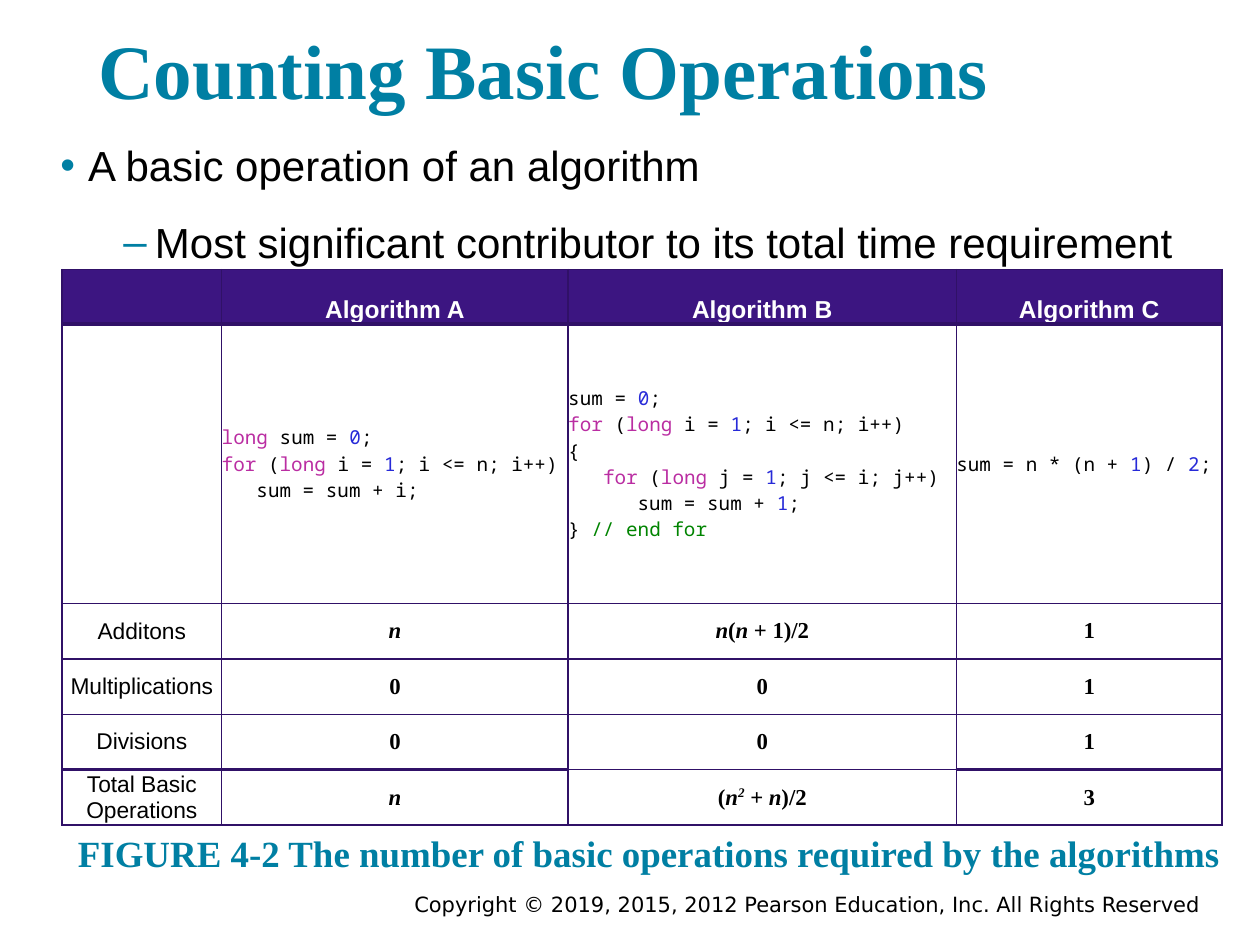
from itertools import groupby, product

from lxml import etree
from pptx import Presentation
from pptx.dml.color import RGBColor
from pptx.enum.text import MSO_ANCHOR, MSO_AUTO_SIZE, PP_ALIGN
from pptx.oxml.ns import qn
from pptx.util import Inches, Pt

LEFT, CENTER, RIGHT = PP_ALIGN.LEFT, PP_ALIGN.CENTER, PP_ALIGN.RIGHT
TOP, MIDDLE, BOTTOM = MSO_ANCHOR.TOP, MSO_ANCHOR.MIDDLE, MSO_ANCHOR.BOTTOM

COLORS = {
    "teal": "007FA3", "black": "000000", "white": "FFFFFF",
    "header": "3C1581", "border": "301167",
    "keyword": "BA2DA2", "number": "272AD8", "comment": "008400",
}

TITLE = "Counting Basic Operations"
BULLETS = [
    # text, bullet, left margin, hanging indent, space before
    ("A basic operation of an algorithm", "•", 0.33, 0.22, 0),
    ("Most significant contributor to its total time requirement", "–", 0.86, 0.25, 15),
]
CAPTION = "FIGURE 4-2 The number of basic operations required by the algorithms"
COPYRIGHT = "Copyright © 2019, 2015, 2012 Pearson Education, Inc. All Rights Reserved"

HEADINGS = ["", "Algorithm A", "Algorithm B", "Algorithm C"]
CODE = [
    "",
    """long sum = 0;
for (long i = 1; i <= n; i++)
   sum = sum + i;""",
    """sum = 0;
for (long i = 1; i <= n; i++)
{
   for (long j = 1; j <= i; j++)
      sum = sum + 1;
} // end for""",
    "sum = n * (n + 1) / 2;",
]
COUNTS = [
    ("Additons", "n", "n(n + 1)/2", "1"),
    ("Multiplications", "0", "0", "1"),
    ("Divisions", "0", "0", "1"),
    ("Total Basic Operations", "n", "(n² + n)/2", "3"),
]
COLUMN_WIDTHS = [1.27, 2.75, 3.08, 2.11]
ROW_HEIGHTS = [0.43, 2.22] + [0.44] * len(COUNTS)
KEYWORDS = {"long", "for"}
# (row above the rule, column): width of the rule in points, 1 elsewhere
HEAVY_RULES = {**{(0, column): 3 for column in range(4)},
               **{(4, column): 2 for column in (0, 1, 3)}}

TITLE_FONT = dict(name="Times New Roman", size=Pt(44), bold=True, color="teal")
BODY_FONT = dict(name="Arial", size=Pt(24), color="black")
CAPTION_FONT = dict(TITLE_FONT, size=Pt(21.1))
COPYRIGHT_FONT = dict(name="DejaVu Sans", size=Pt(12), color="black")
HEADING_FONT = dict(name="Arial", size=Pt(14), bold=True, color="white")
CODE_FONT = dict(name="Noto Sans Mono", size=Pt(11), bold=False, color="black")
LABEL_FONT = dict(name="Arial", size=Pt(13), bold=False, color="black")
MATH_FONT = dict(name="Times New Roman", size=Pt(13), bold=True, color="black")


def rgb(name):
    return RGBColor.from_string(COLORS[name])


def add_span(para, text, formats):
    span = para.add_run()
    span.text = text
    for name, value in formats.items():
        if name == "color":
            span.font.color.rgb = rgb(value)
        else:
            setattr(span.font, name, value)
    return span


def set_frame(box, anchor, inset):
    frame = box.text_frame
    frame.word_wrap = True
    frame.auto_size = MSO_AUTO_SIZE.NONE
    frame.vertical_anchor = anchor
    for side in ("left", "top", "right", "bottom"):
        setattr(frame, f"margin_{side}", Inches(inset))
    return frame


def place(box, *bounds):
    box.left, box.top, box.width, box.height = map(Inches, bounds)


def add_line_of_text(box, text, formats, align, anchor, inset):
    para = set_frame(box, anchor, inset).paragraphs[0]
    para.alignment = align
    add_span(para, text, formats)


def add_bullet(para, symbol, margin, hanging):
    properties = para._p.get_or_add_pPr()
    properties.set("marL", str(Inches(margin)))
    properties.set("indent", str(-Inches(hanging)))
    color = etree.SubElement(properties, qn("a:buClr"))
    etree.SubElement(color, qn("a:srgbClr"), val=COLORS["teal"])
    etree.SubElement(properties, qn("a:buFont"), typeface="Arial")
    etree.SubElement(properties, qn("a:buChar"), char=symbol)


def code_color(word):
    if word in KEYWORDS:
        return "keyword"
    return "number" if word.isdigit() else "black"


def add_code_line(para, line):
    """Write one line of code with its keywords, numbers and comment coloured."""
    code, mark, comment = line.partition("//")
    words = ("".join(letters) for _, letters in groupby(code, str.isalnum))
    for color, group in groupby(words, code_color):
        add_span(para, "".join(group), dict(CODE_FONT, color=color))
    if mark:
        add_span(para, mark + comment, dict(CODE_FONT, color="comment"))


def add_formula(para, formula):
    """Write a formula with italic variables and a raised square."""
    def kind(letter):
        return "power" if letter == "²" else "variable" if letter == "n" else "plain"

    for style, group in groupby(formula, kind):
        text = "".join(group).replace("²", "2")
        span = add_span(para, text, dict(MATH_FONT, italic=style != "plain"))
        if style == "power":
            span._r.get_or_add_rPr().set("baseline", "32000")


def set_borders(cell, row, column):
    widths = {
        "L": 1, "R": 1,
        "T": HEAVY_RULES.get((row - 1, column), 1),
        "B": HEAVY_RULES.get((row, column), 1),
    }
    properties = cell._tc.get_or_add_tcPr()
    for position, (side, width) in enumerate(widths.items()):
        line = etree.Element(qn(f"a:ln{side}"), w=str(Pt(width)))
        fill = etree.SubElement(line, qn("a:solidFill"))
        etree.SubElement(fill, qn("a:srgbClr"), val=COLORS["border"])
        properties.insert(position, line)


def fill_cell(cell, row, column, text):
    cell.fill.solid()
    cell.fill.fore_color.rgb = rgb("white" if row else "header")
    cell.vertical_anchor = MIDDLE if row else BOTTOM
    for side in ("left", "top", "right", "bottom"):
        setattr(cell, f"margin_{side}", 0)
    set_borders(cell, row, column)

    frame = cell.text_frame
    for number, line in enumerate(text.split("\n")):
        para = frame.add_paragraph() if number else frame.paragraphs[0]
        para.alignment = LEFT if row == 1 else CENTER
        if row == 1:
            add_code_line(para, line)
        elif row and column:
            add_formula(para, line)
        elif line:
            add_span(para, line, LABEL_FONT if row else HEADING_FONT)


def add_operations_table(page):
    rows = [HEADINGS, CODE, *COUNTS]
    table = page.shapes.add_table(
        len(rows), len(HEADINGS), Inches(0.49), Inches(2.14),
        Inches(sum(COLUMN_WIDTHS)), Inches(sum(ROW_HEIGHTS))).table
    table.first_row = table.horz_banding = False
    for column, width in zip(table.columns, COLUMN_WIDTHS):
        column.width = Inches(width)
    for row, height in zip(table.rows, ROW_HEIGHTS):
        row.height = Inches(height)
    for row, column in product(range(len(rows)), range(len(HEADINGS))):
        fill_cell(table.cell(row, column), row, column, rows[row][column])


def main():
    deck = Presentation()
    deck.slide_width, deck.slide_height = Inches(10), Inches(7.5)
    page = deck.slides.add_slide(deck.slide_layouts[1])

    title, body = page.placeholders
    place(title, 0.68, 0.06, 9, 0.95)
    add_line_of_text(title, TITLE, TITLE_FONT, LEFT, BOTTOM, 0.1)

    place(body, 0.27, 1.01, 9.31, 1.66)
    frame = set_frame(body, TOP, 0.1)
    for level, (text, symbol, margin, hanging, gap) in enumerate(BULLETS):
        para = frame.add_paragraph() if level else frame.paragraphs[0]
        para.level = level
        para.space_before = Pt(gap)
        add_bullet(para, symbol, margin, hanging)
        add_span(para, text, BODY_FONT)

    for text, formats, align, anchor, inset, bounds in [
        (COPYRIGHT, COPYRIGHT_FONT, RIGHT, TOP, 0.05, (1.75, 7.03, 7.83, 0.31)),
        (CAPTION, CAPTION_FONT, LEFT, BOTTOM, 0.1, (0.52, 6.4, 9.31, 0.64)),
    ]:
        box = page.shapes.add_textbox(*map(Inches, bounds))
        add_line_of_text(box, text, formats, align, anchor, inset)

    add_operations_table(page)
    deck.save("out.pptx")


if __name__ == "__main__":
    main()
